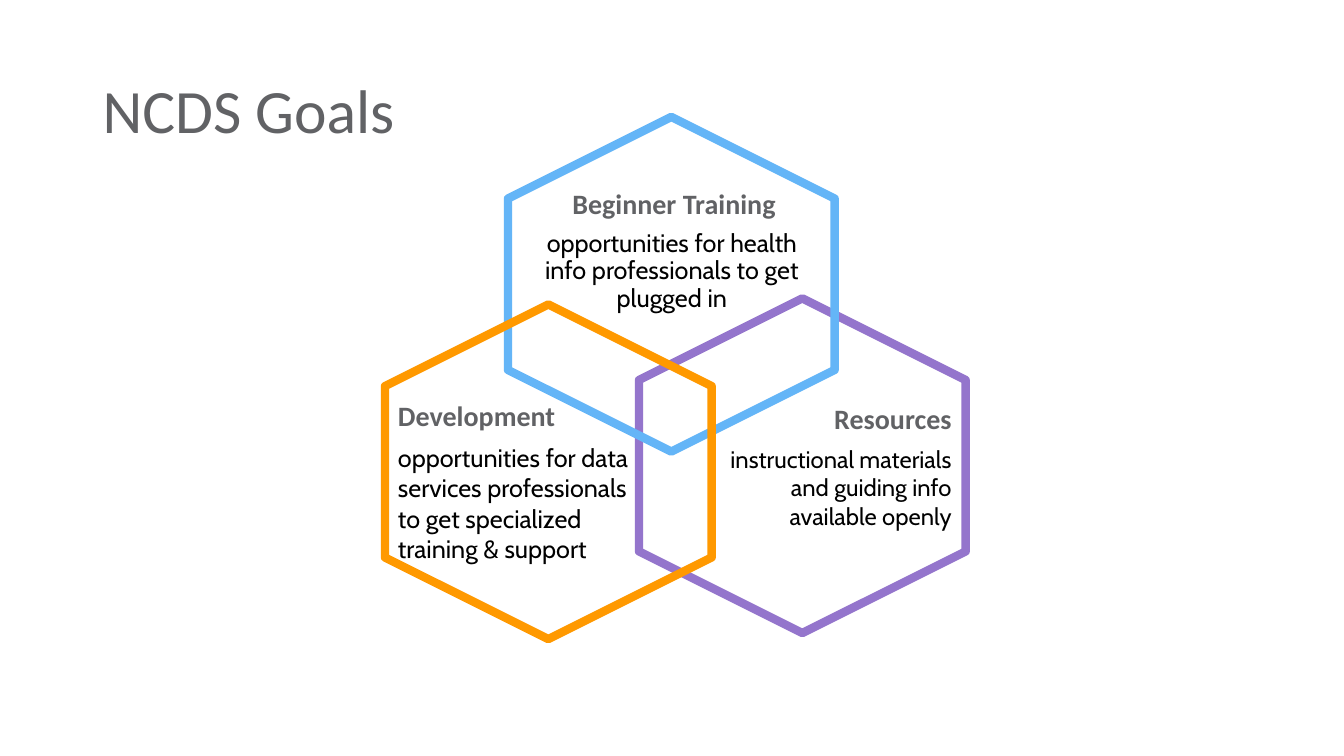
from dataclasses import dataclass

from lxml import etree
from pptx import Presentation
from pptx import util as u
from pptx.dml.color import RGBColor
from pptx.enum import shapes, text
from pptx.oxml import ns

Pt = u.Pt
LEFT, MID, RIGHT = text.PP_ALIGN.LEFT, text.PP_ALIGN.CENTER, text.PP_ALIGN.RIGHT
TOP, CENTER, BASE = (text.MSO_ANCHOR.TOP, text.MSO_ANCHOR.MIDDLE,
                     text.MSO_ANCHOR.BOTTOM)


@dataclass(frozen=True)
class Style:
    font: str
    size: float
    color: str
    bold: bool = False


theme = {
    "title": Style("Calibri", 44, "616265"),
    "head": Style("Calibri", 20, "616265", True),
    "body": Style("Cabin", 18, "000000"),
    "small": Style("Cabin", 17, "000000"),
    "purple": "9475CC",
    "blue": "64B5F7",
    "orange": "FF9900",
}

deck = Presentation()
deck.slide_width, deck.slide_height = Pt(960), Pt(540)
slide = deck.slides.add_slide(deck.slide_layouts[6])


def add_label(box, style, words, align=LEFT, anchor=TOP, space=1.0):
    """Add a text box; each entry in words is one paragraph."""
    look = theme[style]
    frame = slide.shapes.add_textbox(*map(Pt, box)).text_frame
    frame.word_wrap = True
    frame.vertical_anchor = anchor
    for i, line in enumerate(words):
        para = frame.add_paragraph() if i else frame.paragraphs[0]
        para.text = line
        para.alignment = align
        para.line_spacing = space
        for run in para.runs:
            run.font.name = look.font
            run.font.size = Pt(look.size)
            run.font.bold = look.bold
            run.font.color.rgb = RGBColor.from_string(look.color)


# Title
add_label((66.24, 28.8, 828, 104.4), "title", ["NCDS Goals"],
          anchor=CENTER, space=0.9)

# Beginner training
add_label((401.76, 96.48, 162.72, 64.8), "head", ["Beginner Training"],
          anchor=BASE, space=0.9)
add_label((380.88, 161.28, 198, 104.4), "body",
          ["opportunities for health info professionals to get plugged in"],
          align=MID, space=0.9)

# Development
add_label((277.2, 278.64, 227.52, 33.84), "head", ["Development"],
          anchor=BASE, space=0.9)
add_label((277.2, 312.48, 227.52, 97.2), "body",
          ["opportunities for data services professionals",
           "to get specialized\ntraining & support"])

# Three linked hexagons, standing on a point
for color, left, top in (("purple", 453.6, 216), ("blue", 360, 86.4),
                         ("orange", 272.16, 220.32)):
    hexa = slide.shapes.add_shape(shapes.MSO_SHAPE.HEXAGON, Pt(left), Pt(top),
                                  Pt(239.04), Pt(233.28))
    hexa.adjustments[0] = 0.25
    hexa.adjustments[1] = 1.155
    hexa.rotation = 270
    hexa.shadow.inherit = False
    hexa.fill.background()
    hexa.line.width = Pt(6)
    hexa.line.color.rgb = RGBColor.from_string(theme[color])
    etree.SubElement(hexa.line._get_or_add_ln(), ns.qn("a:round"))

# Resources
add_label((459.36, 280.8, 227.52, 33.84), "head", ["Resources"],
          align=RIGHT, anchor=BASE, space=0.9)
add_label((504.72, 313.92, 182.16, 97.2), "small",
          ["instructional materials\nand guiding info available openly"],
          align=RIGHT)

deck.save("out.pptx")
